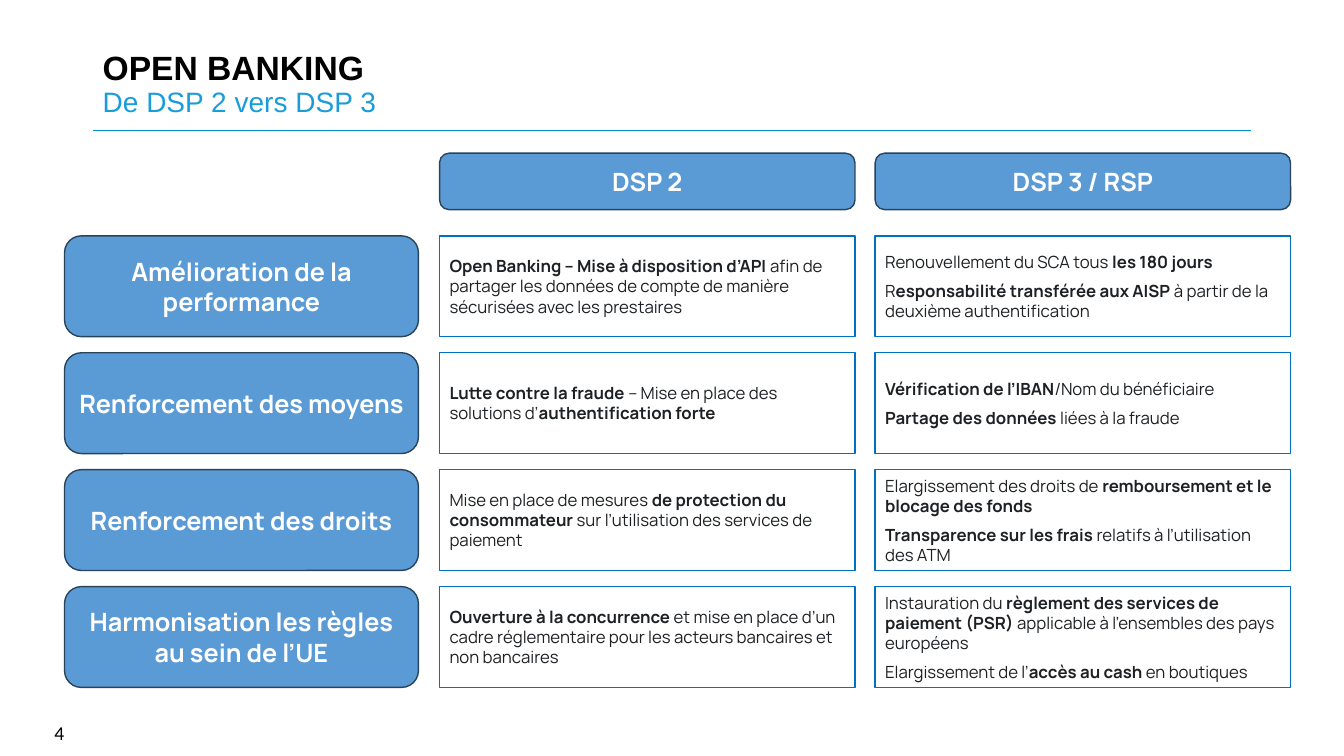
from pptx import Presentation
from pptx import util as u
from pptx.dml.color import RGBColor
from pptx.enum import shapes, text
from pptx.oxml.ns import qn
from lxml import etree

# Content: **double asterisks** mark bold words
TITLE = "OPEN BANKING"
SUBTITLE = "De DSP 2 vers DSP 3"
PAGE_NUMBER = "4"
HEADERS = ["DSP 2", "DSP 3 / RSP"]
ROWS = [
    ("Amélioration de la performance",
     ["**Open Banking – Mise à disposition d’API **afin de partager les données "
      "de compte de manière sécurisées avec les prestaires"],
     ["Renouvellement du SCA tous **les 180 jours**",
      "R**esponsabilité transférée aux AISP **à partir de la deuxième authentification"]),
    ("Renforcement des moyens",
     ["**Lutte contre la fraude **– Mise en place des solutions d’**authentification forte**"],
     ["**Vérification de l’IBAN**/Nom du bénéficiaire",
      "**Partage des données **liées à la fraude"]),
    ("Renforcement des droits",
     ["Mise en place de mesures **de protection du consommateur **sur l’utilisation "
      "des services de paiement"],
     ["Elargissement des droits de **remboursement et le blocage des fonds**",
      "**Transparence sur les frais** relatifs à l’utilisation des ATM"]),
    ("Harmonisation les règles au sein de l’UE",
     ["**Ouverture à la concurrence** et mise en place d’un cadre réglementaire pour "
      "les acteurs bancaires et non bancaires"],
     ["Instauration du **règlement des services de paiement (PSR) **applicable à "
      "l’ensembles des pays européens",
      "Elargissement de l’**accès au cash** en boutiques"]),
]

THEME = {
    "title_font": "Arial", "body_font": "Manrope", "number_font": "Calibri",
    "title_size": 24, "subtitle_size": 20, "label_size": 18,
    "body_size": 12, "number_size": 14,
    "black": "000000", "subtitle": "199CD9", "rule": "0090CF",
    "label_fill": "5B9BD5", "label_line": "28445D", "label_text": "FFFFFF",
    "cell_line": "0070C0", "cell_text": "1E2124",
}

# Grid, in inches
LABEL_LEFT, LABEL_WIDTH = 0.64, 3.51
COLUMN_LEFT, COLUMN_WIDTH, COLUMN_PITCH = 4.36, 4.12, 4.32
HEADER_TOP, HEADER_HEIGHT = 1.52, 0.56
ROW_TOP, ROW_HEIGHT, ROW_PITCH = 2.34, 1, 1.16


def color(name):
    return RGBColor.from_string(THEME[name])


def style(span, kind, size, ink, bold=False):
    span.font.name = THEME[kind + "_font"]
    span.font.size = u.Pt(THEME[size + "_size"])
    span.font.color.rgb = color(ink)
    span.font.bold = bold


def add_text_box(page, left, top, width, height):
    box = page.shapes.add_textbox(*map(u.Inches, (left, top, width, height)))
    box.text_frame.word_wrap = True
    return box.text_frame


def add_panel(page, shape_type, left, top, width, height, line):
    box = page.shapes.add_shape(shape_type, *map(u.Inches, (left, top, width, height)))
    box.shadow.inherit = False
    box.line.color.rgb = color(line)
    box.line.width = u.Pt(1)
    box.text_frame.word_wrap = True
    box.text_frame.vertical_anchor = text.MSO_ANCHOR.MIDDLE
    return box


def add_label(page, words, *place):
    box = add_panel(page, shapes.MSO_SHAPE.ROUNDED_RECTANGLE, *place, "label_line")
    box.fill.solid()
    box.fill.fore_color.rgb = color("label_fill")
    box.text_frame.text = words
    para = box.text_frame.paragraphs[0]
    para.alignment = text.PP_ALIGN.CENTER
    style(para.runs[0], "body", "label", "label_text", bold=True)


def add_cell(page, lines, *place):
    box = add_panel(page, shapes.MSO_SHAPE.RECTANGLE, *place, "cell_line")
    box.fill.background()
    for index, line in enumerate(lines):
        para = box.text_frame.add_paragraph() if index else box.text_frame.paragraphs[0]
        para.alignment = text.PP_ALIGN.LEFT
        if index:
            para.space_before = u.Pt(6)
        for part, words in enumerate(line.split("**")):
            if words:
                span = para.add_run()
                span.text = words
                style(span, "body", "body", "cell_text", bold=part % 2 == 1)


def add_heading(page):
    rule = page.shapes.add_connector(
        shapes.MSO_CONNECTOR.STRAIGHT, *map(u.Inches, (0.92, 1.29, 12.41, 1.29)))
    rule.line.color.rgb = color("rule")
    rule.line.width = u.Pt(0.5)
    etree.SubElement(rule._element.spPr, qn("a:effectLst"))

    frame = add_text_box(page, 0.92, 0.4, 11.5, 0.89)
    frame.vertical_anchor = text.MSO_ANCHOR.MIDDLE
    frame.text = f"{TITLE}\v{SUBTITLE}"
    para = frame.paragraphs[0]
    para.line_spacing = 0.9
    title, subtitle = para.runs
    style(title, "title", "title", "black", bold=True)
    style(subtitle, "title", "subtitle", "subtitle")


def main():
    deck = Presentation()
    deck.slide_width, deck.slide_height = u.Inches(13.33), u.Inches(7.5)
    page = deck.slides.add_slide(deck.slide_layouts[6])

    add_heading(page)
    number = add_text_box(page, 0.44, 7.1, 3, 0.4)
    number.text = PAGE_NUMBER
    style(number.paragraphs[0].runs[0], "number", "number", "black")

    column_lefts = [COLUMN_LEFT + i * COLUMN_PITCH for i in range(len(HEADERS))]
    for left, header in zip(column_lefts, HEADERS):
        add_label(page, header, left, HEADER_TOP, COLUMN_WIDTH, HEADER_HEIGHT)
    for index, (label, *cells) in enumerate(ROWS):
        top = ROW_TOP + index * ROW_PITCH
        add_label(page, label, LABEL_LEFT, top, LABEL_WIDTH, ROW_HEIGHT)
        for left, lines in zip(column_lefts, cells):
            add_cell(page, lines, left, top, COLUMN_WIDTH, ROW_HEIGHT)

    deck.save("out.pptx")


if __name__ == "__main__":
    main()
